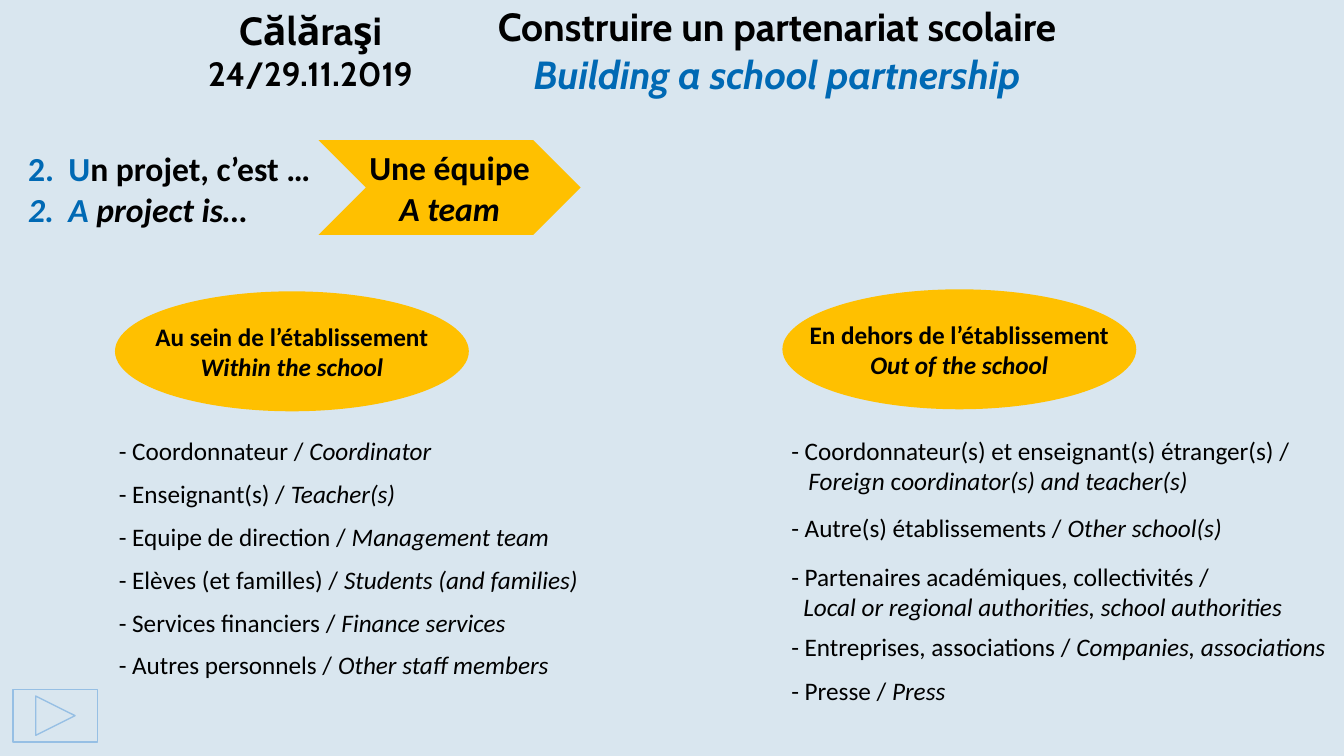
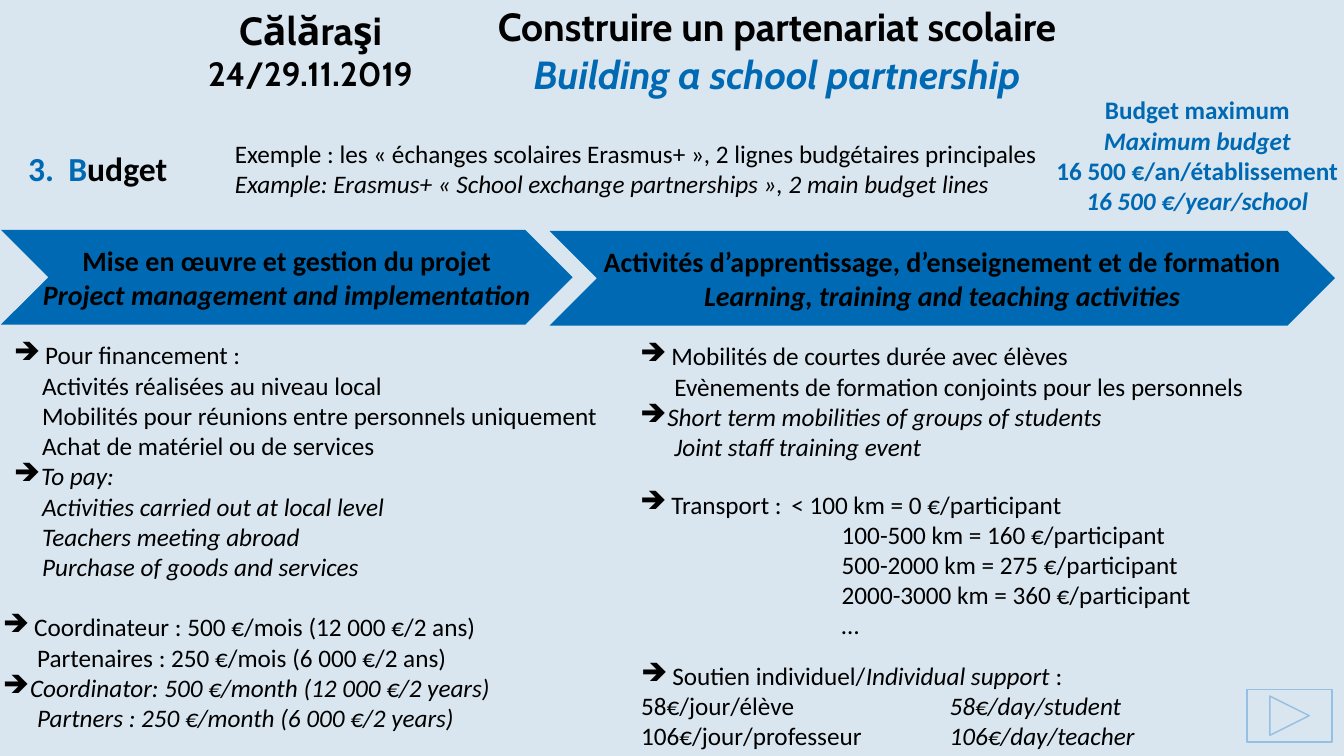
from lxml.etree import SubElement
from pptx import Presentation
from pptx.dml.color import RGBColor
from pptx.enum.shapes import MSO_SHAPE
from pptx.enum.text import MSO_ANCHOR, PP_ALIGN
from pptx.oxml.ns import qn
from pptx.util import Inches, Pt

COLORS = {
    "background": "D9E6EF",
    "text": "000000",
    "blue": "0069B4",
    "yellow": "FFC000",
    "button": "96BFE4",
}

# Text markup: *italic*, ~blue~. A paragraph is a string or (string, format).
ARROW = {"left": 0.31, "bullet": "➔"}
ARROW_EN = {"left": 0.27, "bullet": "➔"}
UNDER = {"left": 0.28}
UNDER_WIDE = {"left": 0.34}
RATE = {"left": 2}
NUMBER = {"tab": 0.4}
SUPPORT = {"tab": 3.06}

HEADER = [
    ((1.84, 0.01, 2.48, 0.97), ["Călăraşi", ("24/29.11.2019", {"size": 24})]),
    ((4.61, -0.02, 6.19, 1.03),
     ["Construire un partenariat scolaire", "*~Building a school partnership~*"]),
]

TEAM_HEADING = [("~2.\tU~n projet, c’est …", NUMBER), ("*~2.\tA ~project is…*", NUMBER)]
TEAM = ["Une équipe", "*A team*"]
TEAM_GROUPS = [
    ((1.14, 2.89), ["Au sein de l’établissement", "*Within the school*"]),
    ((7.76, 2.87), ["En dehors de l’établissement", "*Out of the school*"]),
]
WITHIN_SCHOOL = [
    "- Coordonnateur / *Coordinator*",
    "- Enseignant(s) / *Teacher(s)*",
    "- Equipe de direction / *Management team*",
    "- Elèves (et familles) / *Students (and families)*",
    "- Services financiers / *Finance services*",
    "- Autres personnels / *Other staff members*",
]
OUT_OF_SCHOOL = [
    "- Coordonnateur(s) et enseignant(s) étranger(s) /",
    ("*Foreign *c*oordinator(s) and teacher(s)*", {"left": 0.17}),
    ("- Autre(s) établissements / *Other school(s)*", {"before": 12}),
    ("- Partenaires académiques, collectivités /", {"before": 13}),
    ("*Local or regional authorities, school authorities*", {"left": 0.12}),
    ("- Entreprises, associations / *Companies, associations*", {"before": 7}),
    ("- Presse / *Press*", {"before": 10}),
]

BUDGET_HEADING = [("~3.\tB~udget", NUMBER)]
EXAMPLE = [
    "Exemple : les « échanges scolaires Erasmus+ », 2 lignes budgétaires principales",
    "*Example: Erasmus+ « School exchange partnerships », 2 main budget lines*",
]
MAXIMUM = [
    "~Budget maximum~",
    "*~Maximum budget~*",
    "~16 500 €/an/établissement~",
    "*~16 500 €/year/school~*",
]
BUDGET_LINES = [
    ((0.01, 2.28, 5.67, 0.94),
     ["Mise en œuvre et gestion du projet", "*Project management and implementation*"]),
    ((5.45, 2.29, 7.79, 0.94),
     ["Activités d’apprentissage, d’enseignement et de formation",
      "*Learning, training and teaching activities*"]),
]
BUDGET_DETAILS = [
    ((0.04, 3.32, 6.54, 2.52), [
        ("Pour financement :", ARROW),
        ("Activités réalisées au niveau local", UNDER),
        ("Mobilités pour réunions entre personnels uniquement", UNDER),
        ("Achat de matériel ou de services", UNDER),
        ("*To pay:*", ARROW_EN),
        ("*Activities carried out at local level*", UNDER),
        ("*Teachers meeting abroad*", UNDER),
        ("*Purchase of goods and services*", UNDER),
    ]),
    ((-0.07, 6.02, 5.82, 1.31), [
        ("Coordinateur : 500 €/mois (12 000 €/2 ans)", ARROW),
        ("Partenaires : 250 €/mois (6 000 €/2 ans)", UNDER_WIDE),
        ("*Coordinator: 500 €/month (12 000 €/2 years)*", ARROW_EN),
        ("*Partners : 250 €/month (6 000 €/2 years)*", UNDER_WIDE),
    ]),
    ((6.25, 3.33, 6.54, 1.31), [
        ("Mobilités de courtes durée avec élèves", ARROW),
        ("Evènements de formation conjoints pour les personnels", UNDER_WIDE),
        ("*Short term mobilities of groups of students*", ARROW_EN),
        ("*Joint staff training event*", UNDER_WIDE),
    ]),
    ((6.25, 4.8, 5.82, 1.62), [
        ("Transport :\t< 100 km = 0 €/participant", ARROW),
        ("100-500 km = 160 €/participant", RATE),
        ("500-2000 km = 275 €/participant", RATE),
        ("2000-3000 km = 360 €/participant", RATE),
        ("…", RATE),
    ]),
    ((6.26, 6.5, 5.55, 1.01), [
        ("Soutien individuel/*Individual support* :", ARROW),
        ("58€/jour/élève\t*58€/day/student*", SUPPORT),
        ("106€/jour/professeur\t*106€/day/teacher*", SUPPORT),
    ]),
]


def color(name):
    return RGBColor.from_string(COLORS[name])


def format_paragraph(paragraph, left=0, bullet=None, tab=None, before=0):
    if before:
        paragraph.space_before = Pt(before)
    properties = paragraph._p.get_or_add_pPr()
    if left:
        properties.set("marL", str(Inches(left)))
        properties.set("indent", str(-Inches(left) if bullet else 0))
    if bullet:
        SubElement(properties, qn("a:buChar")).set("char", bullet)
    if tab:
        stop = SubElement(SubElement(properties, qn("a:tabLst")), qn("a:tab"))
        stop.set("pos", str(Inches(tab)))
        stop.set("algn", "l")


def write(frame, paragraphs, size=18, font="Calibri", bold=False, centered=False,
          middle=False, wrap=True, gap=0, margin=0.1):
    frame.word_wrap = wrap
    frame.vertical_anchor = MSO_ANCHOR.MIDDLE if middle else MSO_ANCHOR.TOP
    frame.margin_left = frame.margin_right = Inches(margin)
    for index, item in enumerate(paragraphs):
        text, own = (item, {}) if isinstance(item, str) else item
        options = {"before": gap if index else 0, **own}
        run_size = options.pop("size", size)
        paragraph = frame.add_paragraph() if index else frame.paragraphs[0]
        paragraph.alignment = PP_ALIGN.CENTER if centered else PP_ALIGN.LEFT
        format_paragraph(paragraph, **options)
        for i, part in enumerate(text.split("*")):
            for j, piece in enumerate(part.split("~")):
                if piece:
                    run = paragraph.add_run()
                    run.text = piece
                    run.font.name, run.font.size = font, Pt(run_size)
                    run.font.bold, run.font.italic = bold, i % 2 == 1
                    run.font.color.rgb = color("blue" if j % 2 else "text")


def add_text(slide, box, paragraphs, **style):
    write(slide.shapes.add_textbox(*map(Inches, box)).text_frame, paragraphs, **style)


def add_label(slide, preset, box, fill, paragraphs, size):
    """Add a filled shape with a bold title centred in it."""
    shape = slide.shapes.add_shape(preset, *map(Inches, box))
    shape.shadow.inherit = False
    shape.fill.solid()
    shape.fill.fore_color.rgb = color(fill)
    shape.line.fill.background()
    write(shape.text_frame, paragraphs, size=size, bold=True, centered=True,
          middle=True, wrap=False)


def add_page(prs, heading, button_left):
    """Add a slide with the shared header, its heading and the forward button."""
    slide = prs.slides.add_slide(prs.slide_layouts[6])
    for box, lines in HEADER:
        add_text(slide, box, lines, size=28, font="Cabin", bold=True,
                 centered=True, middle=True)
    add_text(slide, (0.18, 1.42, 3.1, 0.5 if len(heading) == 1 else 0.91), heading,
             size=24, bold=True)
    button = slide.shapes.add_shape(
        MSO_SHAPE.ACTION_BUTTON_FORWARD_OR_NEXT,
        *map(Inches, (button_left, 6.84, 0.84, 0.52)))
    button.shadow.inherit = False
    button.fill.background()
    button.line.color.rgb = color("button")
    button.line.width = Pt(1)
    return slide


def build_team(prs):
    slide = add_page(prs, TEAM_HEADING, 0.13)
    add_label(slide, MSO_SHAPE.CHEVRON, (3.16, 1.39, 2.6, 0.94), "yellow", TEAM, 24)
    for corner, title in TEAM_GROUPS:
        add_label(slide, MSO_SHAPE.OVAL, (*corner, 3.51, 1.19), "yellow", title, 18)
    add_text(slide, (1.08, 4.27, 4.9, 2.55), WITHIN_SCHOOL, gap=9)
    add_text(slide, (7.75, 4.27, 5.56, 2.82), OUT_OF_SCHOOL)


def build_budget(prs):
    slide = add_page(prs, BUDGET_HEADING, 12.37)
    add_text(slide, (2.23, 1.32, 9.59, 0.71), EXAMPLE)
    add_text(slide, (10.42, 0.89, 2.91, 1.31), MAXIMUM, bold=True, centered=True, margin=0)
    for box, title in BUDGET_LINES:
        add_label(slide, MSO_SHAPE.CHEVRON, box, "blue", title, 20)
    for box, lines in BUDGET_DETAILS:
        add_text(slide, box, lines)


def main():
    prs = Presentation()
    prs.slide_width, prs.slide_height = Inches(13.33), Inches(7.5)
    background = prs.slide_master.background.fill
    background.solid()
    background.fore_color.rgb = color("background")
    build_team(prs)
    build_budget(prs)
    prs.save("out.pptx")


if __name__ == "__main__":
    main()
